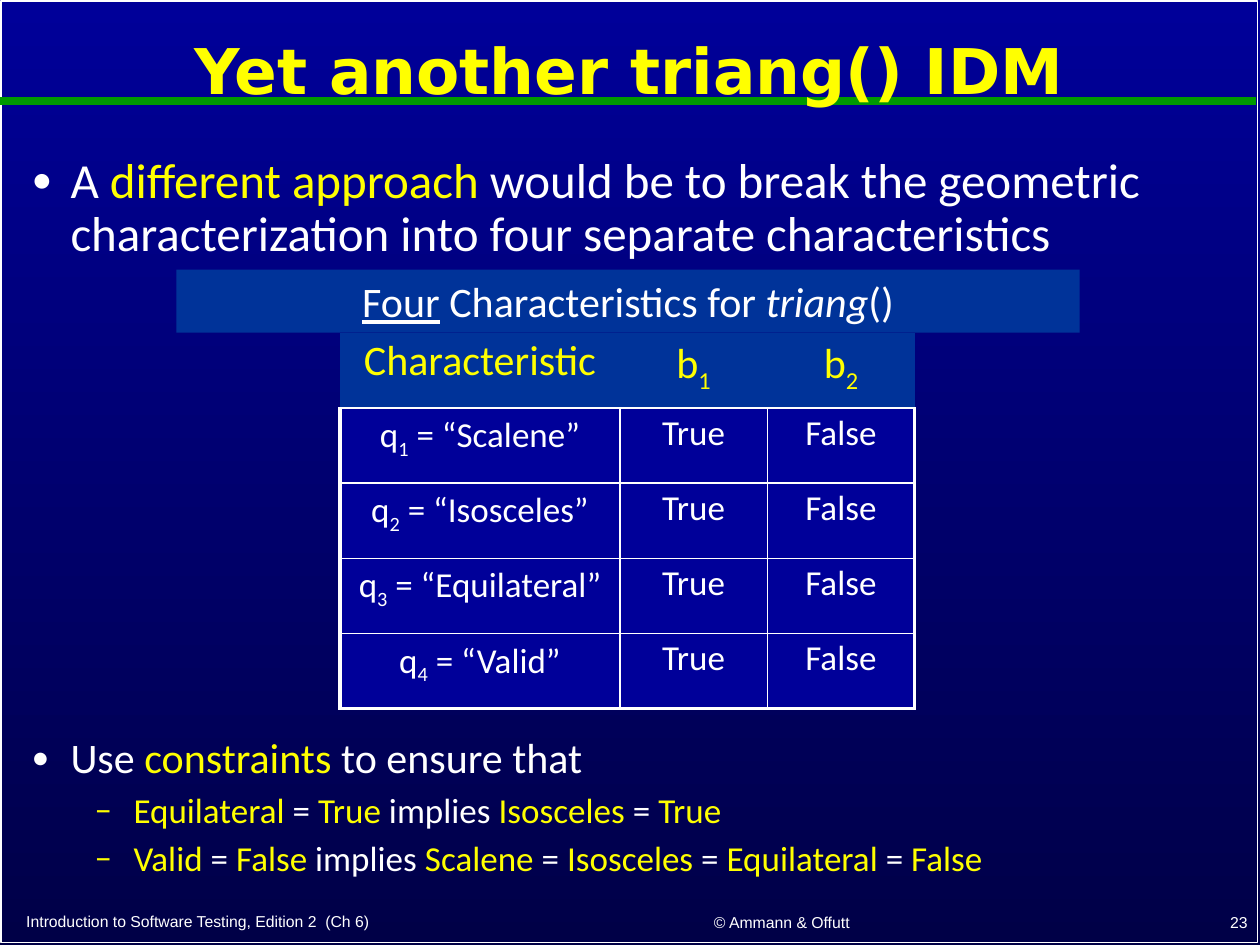
from lxml import etree
from pptx import Presentation
from pptx import util as u
from pptx.dml.color import RGBColor
from pptx.enum import shapes, text
from pptx.oxml import ns

COLORS = {
    "white": "FFFFFF", "yellow": "FFFF00", "green": "009900",
    "panel": "003399", "blue": "000099", "navy": "000047",
}
COLUMNS, ROWS = 100, 75
THIN, THICK = 1, 2.25
NO_TABLE_STYLE = "{2D5ABB26-0587-4C30-8999-92F81FD0307C}"
LEFT, CENTER, RIGHT = text.PP_ALIGN.LEFT, text.PP_ALIGN.CENTER, text.PP_ALIGN.RIGHT
TOP, MIDDLE, BOTTOM = (text.MSO_ANCHOR.TOP, text.MSO_ANCHOR.MIDDLE,
                       text.MSO_ANCHOR.BOTTOM)


def rgb(name):
    return RGBColor.from_string(COLORS[name])


def add(parent, tag, **attributes):
    return etree.SubElement(parent, ns.qn(tag), attributes)


def marked_runs(line):
    """Yield (text, active marks): *yellow*, ~subscript~, _underline_, /italic/."""
    marks, chunk = set(), ""
    for char in line:
        if char in "*~_/":
            if chunk:
                yield chunk, frozenset(marks)
            marks ^= {char}
            chunk = ""
        else:
            chunk += char
    if chunk:
        yield chunk, frozenset(marks)


class Deck:
    def __init__(self):
        self.prs = Presentation()
        self.prs.slide_width, self.prs.slide_height = u.Inches(10), u.Inches(7.5)
        self.s = self.prs.slides.add_slide(self.prs.slide_layouts[3])

    def x(self, columns):
        return round(self.prs.slide_width * columns / COLUMNS)

    def y(self, rows):
        return round(self.prs.slide_height * rows / ROWS)

    def box(self, left, top, width, height):
        return self.x(left), self.y(top), self.x(width), self.y(height)

    def background(self, start, end):
        fill = self.s.background.fill
        fill.gradient()
        fill.gradient_angle = 270
        for stop, color in zip(fill.gradient_stops, (start, end)):
            stop.color.rgb = rgb(color)

    def set_text(self, p, line, size, color="white", font="Calibri", align=LEFT,
                 spacing=None, bold=None):
        p.alignment, p.line_spacing = align, spacing
        for chunk, marks in marked_runs(line):
            r = p.add_run()
            r.text = chunk
            r.font.size, r.font.name, r.font.bold = u.Pt(size), font, bold
            r.font.color.rgb = rgb("yellow" if "*" in marks else color)
            if "_" in marks:
                r.font.underline = True
            if "/" in marks:
                r.font.italic = True
            if "~" in marks:
                r.font._element.set("baseline", "-25000")

    def rectangle(self, box, fill=None, line=None):
        sp = self.s.shapes.add_shape(shapes.MSO_SHAPE.RECTANGLE, *self.box(*box))
        sp.shadow.inherit = False
        if fill:
            sp.fill.solid()
            sp.fill.fore_color.rgb = rgb(fill)
        else:
            sp.fill.background()
        if line:
            sp.line.color.rgb, sp.line.width = rgb(line), u.Pt(1)
        else:
            sp.line.fill.background()
        return sp

    def rule(self, left, right, row, color, width):
        line = self.s.shapes.add_connector(
            shapes.MSO_CONNECTOR.STRAIGHT,
            self.x(left), self.y(row), self.x(right), self.y(row))
        line.line.color.rgb, line.line.width = rgb(color), u.Pt(width)
        add(line.element.spPr, "a:effectLst")

    def banner(self, box, line, size):
        tf = self.rectangle(box, fill="panel").text_frame
        tf.vertical_anchor = TOP
        self.set_text(tf.paragraphs[0], line, size, align=CENTER)

    def placeholder(self, idx, box, anchor):
        """Place a template placeholder in front of what is drawn so far."""
        sp = self.s.placeholders[idx]
        sp.left, sp.top, sp.width, sp.height = self.box(*box)
        self.s.shapes.element.append(sp.element)
        tf = sp.text_frame
        tf.word_wrap, tf.vertical_anchor = True, anchor
        tf.auto_size = text.MSO_AUTO_SIZE.NONE
        return tf

    def title(self, box, line):
        tf = self.placeholder(0, box, MIDDLE)
        self.set_text(tf.paragraphs[0], line, 36, "yellow", "DejaVu Sans",
                      CENTER, 0.9, True)

    def bullets(self, idx, box, items):
        """Fill a list with (level, size, line) items."""
        tf = self.placeholder(idx, box, TOP)
        for i, (level, size, line) in enumerate(items):
            p = tf.add_paragraph() if i else tf.paragraphs[0]
            self.set_text(p, line, size, spacing=0.9)
            p.level = level
            p.space_before = u.Pt(0.3 * size if i else 0)
            pPr = p._p.get_or_add_pPr()
            pPr.set("marL", str(u.Inches(0.31 + 0.5 * level)))
            pPr.set("indent", str(u.Inches(-0.31)))
            add(pPr, "a:buSzPct", val="100000" if level else "85000")
            add(pPr, "a:buFont", typeface="Calibri")
            add(pPr, "a:buChar", char="–" if level else "•")

    def note(self, box, line, align):
        tf = self.s.shapes.add_textbox(*self.box(*box)).text_frame
        tf.word_wrap, tf.vertical_anchor = True, BOTTOM
        self.set_text(tf.paragraphs[0], line, 9, font="Arial", align=align)

    def borders(self, cell, widths):
        tcPr = cell._tc.get_or_add_tcPr()
        for i, (side, width) in enumerate(widths.items()):
            ln = etree.Element(ns.qn(f"a:ln{side}"), w=str(u.Pt(width)))
            add(add(ln, "a:solidFill"), "a:srgbClr", val=COLORS["white"])
            tcPr.insert(i, ln)

    def table(self, left, top, widths, row_height, rows):
        frame = self.s.shapes.add_table(
            len(rows), len(widths),
            *self.box(left, top, sum(widths), row_height * len(rows)))
        table = frame.table
        table.first_row = table.horz_banding = False
        table._tbl.tblPr.find(ns.qn("a:tableStyleId")).text = NO_TABLE_STYLE
        for column, width in zip(table.columns, widths):
            column.width = self.x(width)
        last_row, last_column = len(rows) - 1, len(widths) - 1
        for i, row in enumerate(rows):
            table.rows[i].height = self.y(row_height)
            for j, line in enumerate(row):
                cell = table.cell(i, j)
                cell.fill.solid()
                cell.fill.fore_color.rgb = rgb("blue" if i else "panel")
                self.set_text(cell.text_frame.paragraphs[0], line, 20 if i else 24,
                              "white" if i else "yellow", align=CENTER, spacing=0.9)
                if i:
                    self.borders(cell, {
                        "L": THIN if j else THICK,
                        "R": THICK if j == last_column else THIN,
                        "T": THIN,
                        "B": THICK if i == last_row else THIN,
                    })


def main():
    deck = Deck()
    deck.background("blue", "navy")
    deck.rectangle((0.1, 0.1, 99.7, 74.7), line="white")
    deck.rule(0, 99.7, 8, "green", 4.5)
    deck.note((46.2, 71.7, 31.7, 2.7), "© Ammann & Offutt", CENTER)
    deck.note((79.2, 71.6, 20.8, 2.8), "23", RIGHT)
    deck.title((0.1, 1.1, 99.7, 9.5), "Yet another triang() IDM")
    deck.bullets(1, (1.5, 11.9, 96.9, 9.2), [
        (0, 28, "A *different approach* would be to break the geometric "
                "characterization into four separate characteristics"),
    ])
    deck.banner((14, 21.4, 71.7, 5), "_Four_ Characteristics for /triang/()", 24)
    kinds = ["Scalene", "Isosceles", "Equilateral", "Valid"]
    deck.table(27, 26.4, [22.2, 11.7, 11.7], 5.97,
               [["Characteristic", "b~1~", "b~2~"]]
               + [[f"q~{n}~ = “{kind}”", "True", "False"]
                  for n, kind in enumerate(kinds, 1)])
    deck.bullets(2, (1.5, 58, 96.9, 11.9), [
        (0, 24, "Use *constraints* to ensure that"),
        (1, 20, "*Equilateral* = *True* implies *Isosceles* = *True*"),
        (1, 20, "*Valid* = *False* implies *Scalene* = *Isosceles* = "
                "*Equilateral* = *False*"),
    ])
    deck.note((1.1, 71.8, 43.1, 2.6),
              "Introduction to Software Testing, Edition 2  (Ch 6)", LEFT)
    deck.prs.save("out.pptx")


if __name__ == "__main__":
    main()
